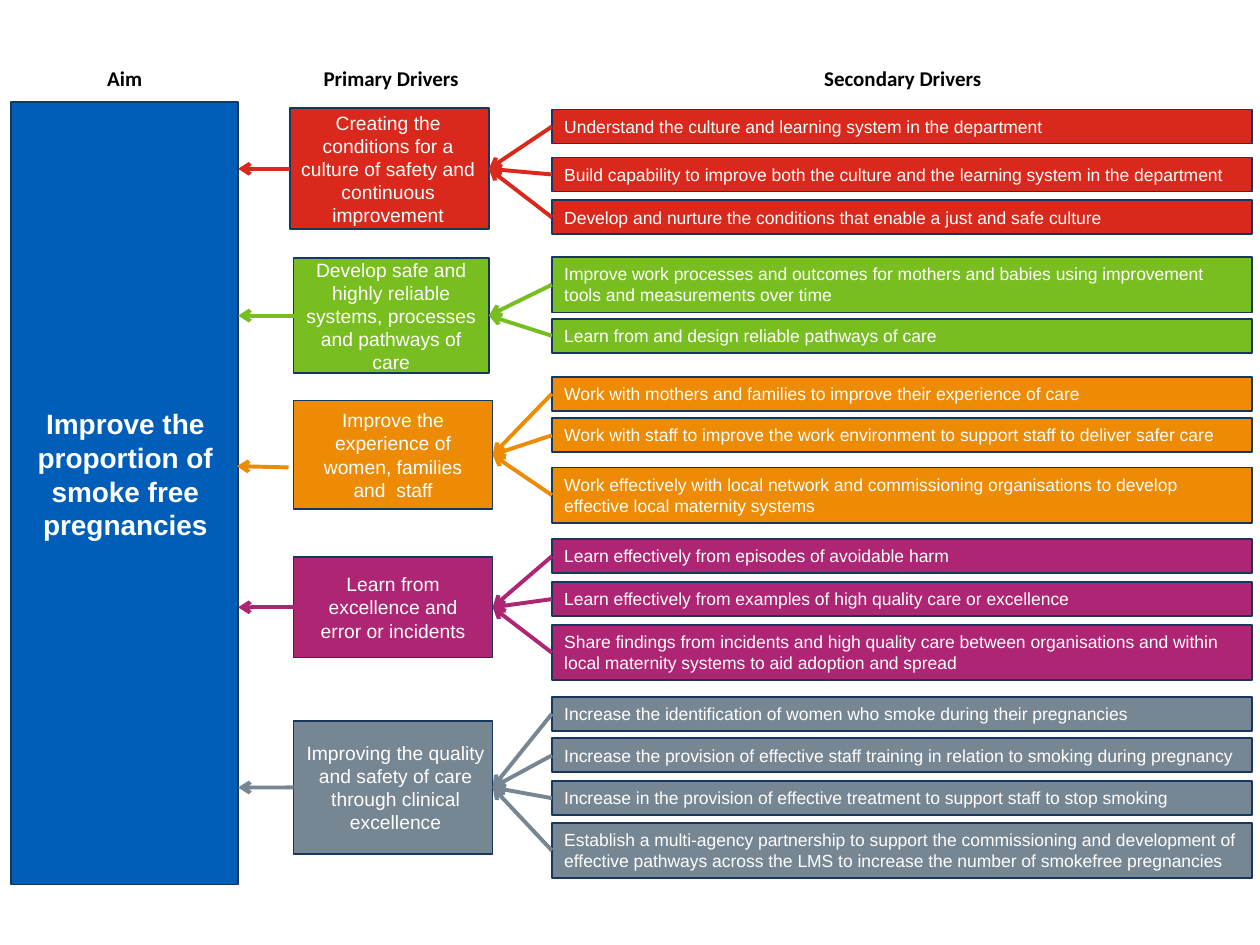
"""Build a driver diagram linking an aim to its primary and secondary drivers."""
from dataclasses import dataclass
from typing import Any, Optional

from lxml import etree
from pptx import Presentation
from pptx import util as u
from pptx.dml import color
from pptx.enum import shapes, text
from pptx.oxml import ns

BORDER, WHITE, BLACK, AIM_BLUE = "17375E", "FFFFFF", "000000", "005EB8"
ONE_LINE, TWO_LINES = 19.44, 31.68
SECONDARY_LEFT, SECONDARY_WIDTH = 315.36, 400.32
CENTER, LEFT = text.PP_ALIGN.CENTER, text.PP_ALIGN.LEFT
MIDDLE, TOP = text.MSO_ANCHOR.MIDDLE, text.MSO_ANCHOR.TOP
GROW = text.MSO_AUTO_SIZE.SHAPE_TO_FIT_TEXT
LEFT_SIDE, RIGHT_SIDE = 1, 3


@dataclass
class Box:
    left: float
    top: float
    width: float
    height: float

    def lengths(self) -> list[u.Length]:
        return [u.Pt(value) for value in (self.left, self.top, self.width, self.height)]


@dataclass
class Secondary:
    wording: str
    top: float
    height: float = ONE_LINE


@dataclass
class Driver:
    wording: str
    fill: str
    box: Box
    secondaries: list[Secondary]
    margins: tuple[float, float] = (7.2, 7.2)
    loose_arrow: Optional[tuple[float, float, float, float]] = None


AIM = Box(6.48, 58.32, 129.6, 447.12)
HEADINGS = {
    "Aim": Box(6.48, 33.84, 129.6, 21.6),
    "Primary Drivers": Box(167.76, 33.84, 111.6, 21.6),
    "Secondary Drivers": Box(316.08, 33.84, 399.6, 21.6),
}
DRIVERS = [
    Driver("Creating the conditions for a culture of safety and continuous improvement",
           "DA291C", Box(165.6, 61.92, 113.76, 69.12), [
               Secondary("Understand the culture and learning system in the department", 62.64),
               Secondary("Build capability to improve both the culture and the learning system "
                         "in the department", 90),
               Secondary("Develop and nurture the conditions that enable a just and safe culture",
                         114.48),
           ], margins=(5.76, 7.2)),
    Driver("Develop safe and highly reliable systems, processes and pathways of care",
           "78BE20", Box(167.76, 147.6, 111.6, 65.52), [
               Secondary("Improve work processes and outcomes for mothers and babies using "
                         "improvement tools and measurements over time", 146.88, TWO_LINES),
               Secondary("Learn from and design reliable pathways of care", 182.16),
           ]),
    Driver("Improve the experience of women, families and  staff",
           "ED8B05", Box(167.76, 228.96, 113.76, 61.92), [
               Secondary("Work with mothers and families to improve their experience of care",
                         215.28),
               Secondary("Work with staff to improve the work environment to support staff "
                         "to deliver safer care", 239.04),
               Secondary("Work effectively with local network and commissioning organisations "
                         "to develop effective local maternity systems", 267.12, TWO_LINES),
           ], loose_arrow=(164.88, 267.12, 135.36, 266.4)),
    Driver("Learn from excellence and error or incidents",
           "AE2573", Box(167.76, 318.24, 113.76, 57.6), [
               Secondary("Learn effectively from episodes of avoidable harm", 308.16),
               Secondary("Learn effectively from examples of high quality care or excellence",
                         332.64),
               Secondary("Share findings from incidents and high quality care between "
                         "organisations and within local maternity systems to aid adoption "
                         "and spread", 357.12, TWO_LINES),
           ]),
    Driver("Improving the quality and safety of care through clinical excellence",
           "768692", Box(167.76, 411.84, 113.76, 76.32), [
               Secondary("Increase the identification of women who smoke during their "
                         "pregnancies", 398.16),
               Secondary("Increase the provision of effective staff training in relation to "
                         "smoking during pregnancy", 421.92),
               Secondary("Increase in the provision of effective treatment to support staff "
                         "to stop smoking", 446.4),
               Secondary("Establish a multi-agency partnership to support the commissioning "
                         "and development of effective pathways across the LMS to increase "
                         "the number of smokefree pregnancies", 470.16, TWO_LINES),
           ], margins=(5.76, 2.88)),
]


def rgb(value: str) -> color.RGBColor:
    return color.RGBColor.from_string(value)


def apply(target: Any, values: dict[str, Any]) -> None:
    for name, value in values.items():
        setattr(target, name, value)


def write(shape: Any, wording: str, ink: str, font: dict[str, Any],
          frame: dict[str, Any], alignment: Any = CENTER) -> None:
    apply(shape.text_frame, {"word_wrap": True} | frame)
    paragraph = shape.text_frame.paragraphs[0]
    paragraph.alignment = alignment
    run = paragraph.add_run()
    run.text = wording
    apply(run.font, font)
    run.font.color.rgb = rgb(ink)


def add_label(slide: Any, wording: str, box: Box, ink: str, font: dict[str, Any]) -> None:
    shape = slide.shapes.add_textbox(*box.lengths())
    write(shape, wording, ink, font | {"bold": True}, {"auto_size": GROW})


def add_rectangle(slide: Any, box: Box, fill: str) -> Any:
    shape = slide.shapes.add_shape(shapes.MSO_SHAPE.RECTANGLE, *box.lengths())
    shape.shadow.inherit = False
    shape.fill.solid()
    shape.fill.fore_color.rgb = rgb(fill)
    shape.line.color.rgb = rgb(BORDER)
    shape.line.width = u.Pt(1)
    return shape


def add_arrow(slide: Any, ends: tuple[float, float, float, float], ink: str) -> Any:
    arrow = slide.shapes.add_connector(
        shapes.MSO_CONNECTOR.STRAIGHT, *[u.Pt(value) for value in ends])
    arrow.line.color.rgb = rgb(ink)
    arrow.line.width = u.Pt(2.25)
    etree.SubElement(arrow.line._get_or_add_ln(), ns.qn("a:tailEnd"), type="arrow")
    etree.SubElement(arrow._element.spPr, ns.qn("a:effectLst"))
    return arrow


def add_driver(slide: Any, driver: Driver) -> None:
    box = driver.box
    primary = add_rectangle(slide, box, driver.fill)
    left, right = driver.margins
    write(primary, driver.wording, WHITE, {"name": "Arial", "size": u.Pt(11)},
          {"vertical_anchor": MIDDLE, "margin_left": u.Pt(left), "margin_right": u.Pt(right)})
    middle = box.top + box.height / 2
    if driver.loose_arrow:
        add_arrow(slide, driver.loose_arrow, driver.fill)
    else:
        arrow = add_arrow(slide, (box.left, middle, AIM.left + AIM.width, middle), driver.fill)
        arrow.begin_connect(primary, LEFT_SIDE)
    for item in driver.secondaries:
        bar = add_rectangle(
            slide, Box(SECONDARY_LEFT, item.top, SECONDARY_WIDTH, item.height), driver.fill)
        write(bar, item.wording, WHITE, {"name": "Arial", "size": u.Pt(10)},
              {"vertical_anchor": TOP, "auto_size": GROW}, LEFT)
        ends = (SECONDARY_LEFT, item.top + item.height / 2, box.left + box.width, middle)
        arrow = add_arrow(slide, ends, driver.fill)
        arrow.begin_connect(bar, LEFT_SIDE)
        arrow.end_connect(primary, RIGHT_SIDE)


def main() -> None:
    presentation = Presentation()
    apply(presentation, {"slide_width": u.Pt(720), "slide_height": u.Pt(540)})
    slide = presentation.slides.add_slide(presentation.slide_layouts[6])
    for wording, box in HEADINGS.items():
        add_label(slide, wording, box, BLACK, {"name": "Calibri", "size": u.Pt(12)})
    add_rectangle(slide, AIM, AIM_BLUE)
    add_label(slide, "Improve the proportion of smoke free pregnancies",
              Box(11.52, 228.96, 120.24, 84.96), WHITE, {"name": "Arial", "size": u.Pt(16)})
    for driver in DRIVERS:
        add_driver(slide, driver)
    presentation.save("out.pptx")


if __name__ == "__main__":
    main()
